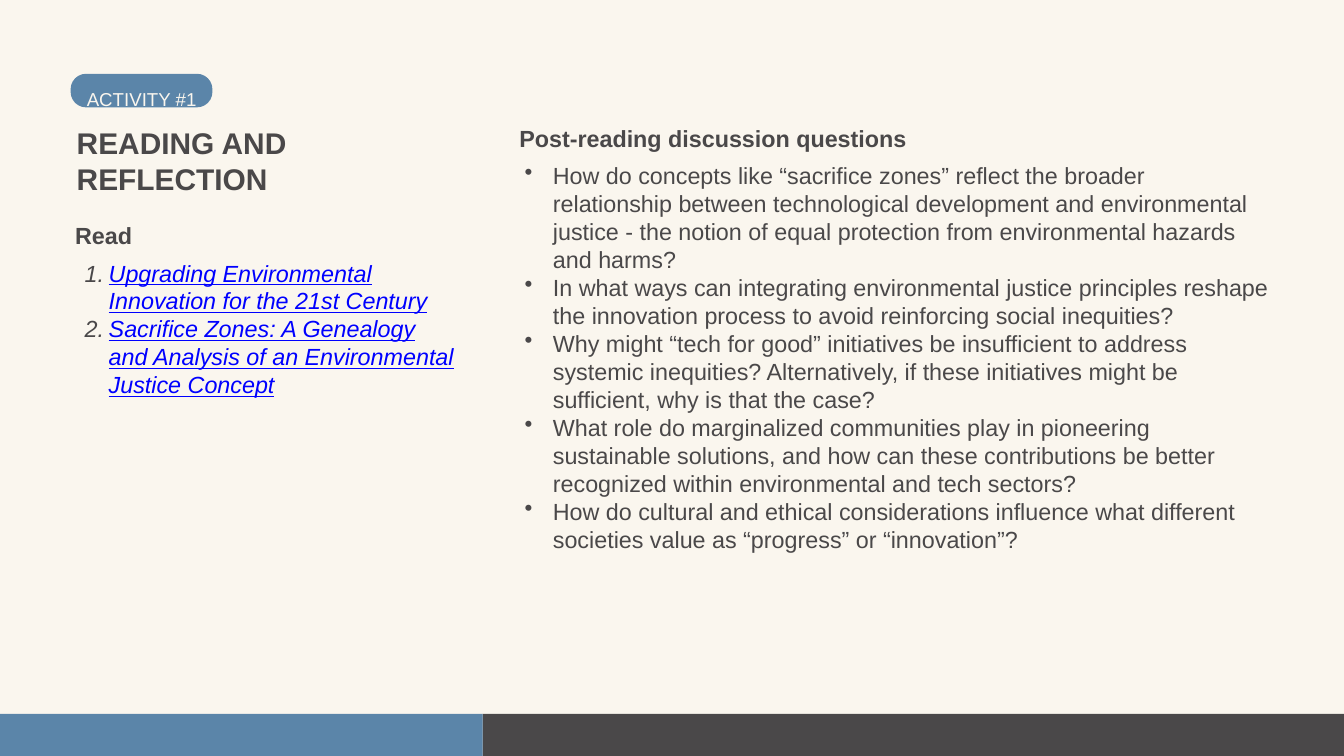
from typing import NamedTuple

from lxml.etree import SubElement
from pptx import Presentation
from pptx.dml.color import RGBColor
from pptx.enum.shapes import MSO_SHAPE as SHAPE
from pptx.oxml.ns import qn
from pptx.util import Cm, Pt

DARK, BLUE, CREAM, LINK = "4A4849", "5B85A9", "FAF6EE", "0000FF"
WIDTH, HEIGHT = 50.8, 28.58
BAR_TOP, BAR_SPLIT = 26.99, 18.24
LEFT, RIGHT = 2.84, 19.63


class Box(NamedTuple):
    x: float
    y: float
    w: float
    h: float

    def lengths(self) -> list:
        return [Cm(v) for v in self]


class Marker(NamedTuple):
    tag: str
    attribute: str
    value: str
    hang: float


NUMBER = Marker("a:buAutoNum", "type", "arabicPeriod", 0.91)
BULLET = Marker("a:buChar", "char", "•", 1.07)

READINGS = [
    "Upgrading Environmental Innovation for the 21st Century",
    "Sacrifice Zones: A Genealogy and Analysis of an Environmental Justice Concept",
]
QUESTIONS = [
    "How do concepts like “sacrifice zones” reflect the broader relationship between "
    "technological development and environmental justice - the notion of equal protection "
    "from environmental hazards and harms?",
    "In what ways can integrating environmental justice principles reshape the innovation "
    "process to avoid reinforcing social inequities?",
    "Why might “tech for good” initiatives be insufficient to address systemic inequities? "
    "Alternatively, if these initiatives might be sufficient, why is that the case?",
    "What role do marginalized communities play in pioneering sustainable solutions, and how "
    "can these contributions be better recognized within environmental and tech sectors?",
    "How do cultural and ethical considerations influence what different societies value as "
    "“progress” or “innovation”?",
]


def rgb(value: str) -> RGBColor:
    return RGBColor.from_string(value)


def add_block(s, kind, box: Box, color: str):
    sp = s.shapes.add_shape(kind, *box.lengths())
    sp.shadow.inherit = False
    sp.fill.solid()
    sp.fill.fore_color.rgb = rgb(color)
    sp.line.fill.background()
    return sp


def set_marker(p, marker: Marker) -> None:
    pPr = p._p.get_or_add_pPr()
    pPr.set("marL", str(Cm(1.27)))
    pPr.set("indent", str(-Cm(marker.hang)))
    SubElement(SubElement(pPr, qn("a:buClr")), qn("a:srgbClr")).set("val", DARK)
    SubElement(pPr, qn(marker.tag)).set(marker.attribute, marker.value)


def add_text(s, box: Box, *lines: str, size: float = 25, color: str = DARK,
             bold: bool = False, italic: bool = False, underline: bool = False,
             spacing: float | None = None, marker: Marker | None = None) -> None:
    tf = s.shapes.add_textbox(*box.lengths()).text_frame
    tf.word_wrap = True
    tf.margin_left = tf.margin_top = tf.margin_right = tf.margin_bottom = 0
    for i, line in enumerate(lines):
        p = tf.add_paragraph() if i else tf.paragraphs[0]
        p.line_spacing = spacing or Pt(size * 1.2)
        if marker:
            set_marker(p, marker)
        r = p.add_run()
        r.text = line
        font = r.font
        font.name, font.size = "Arial", Pt(size)
        font.bold, font.italic, font.underline = bold, italic, underline
        font.color.rgb = rgb(color)


def main() -> None:
    prs = Presentation()
    prs.slide_width, prs.slide_height = Cm(WIDTH), Cm(HEIGHT)
    s = prs.slides.add_slide(prs.slide_layouts[6])
    s.background.fill.solid()
    s.background.fill.fore_color.rgb = rgb(CREAM)

    bar_height = HEIGHT - BAR_TOP
    add_block(s, SHAPE.RECTANGLE, Box(BAR_SPLIT, BAR_TOP, WIDTH - BAR_SPLIT, bar_height), DARK)
    add_block(s, SHAPE.RECTANGLE, Box(0, BAR_TOP, BAR_SPLIT, bar_height), BLUE)

    add_text(s, Box(2.9, 4.7, 11.81, 2.74), "READING AND REFLECTION", size=32, bold=True)
    add_text(s, Box(LEFT, 9.78, 14.4, 5.36), *READINGS, color=LINK, italic=True,
             underline=True, marker=NUMBER)
    add_text(s, Box(LEFT, 8.38, 14.4, 1.07), "Read", bold=True)
    add_text(s, Box(RIGHT, 6.1, 28.32, 14.96), *QUESTIONS, marker=BULLET)
    add_text(s, Box(RIGHT, 4.7, 28.32, 1.07), "Post-reading discussion questions", bold=True)

    badge = add_block(s, SHAPE.ROUNDED_RECTANGLE, Box(2.67, 2.79, 5.36, 1.27), BLUE)
    badge.adjustments[0] = 0.46
    add_text(s, Box(3.28, 3, 23.7, 0.86), "ACTIVITY #1", size=20, color=CREAM, spacing=1.4)

    prs.save("out.pptx")


if __name__ == "__main__":
    main()
